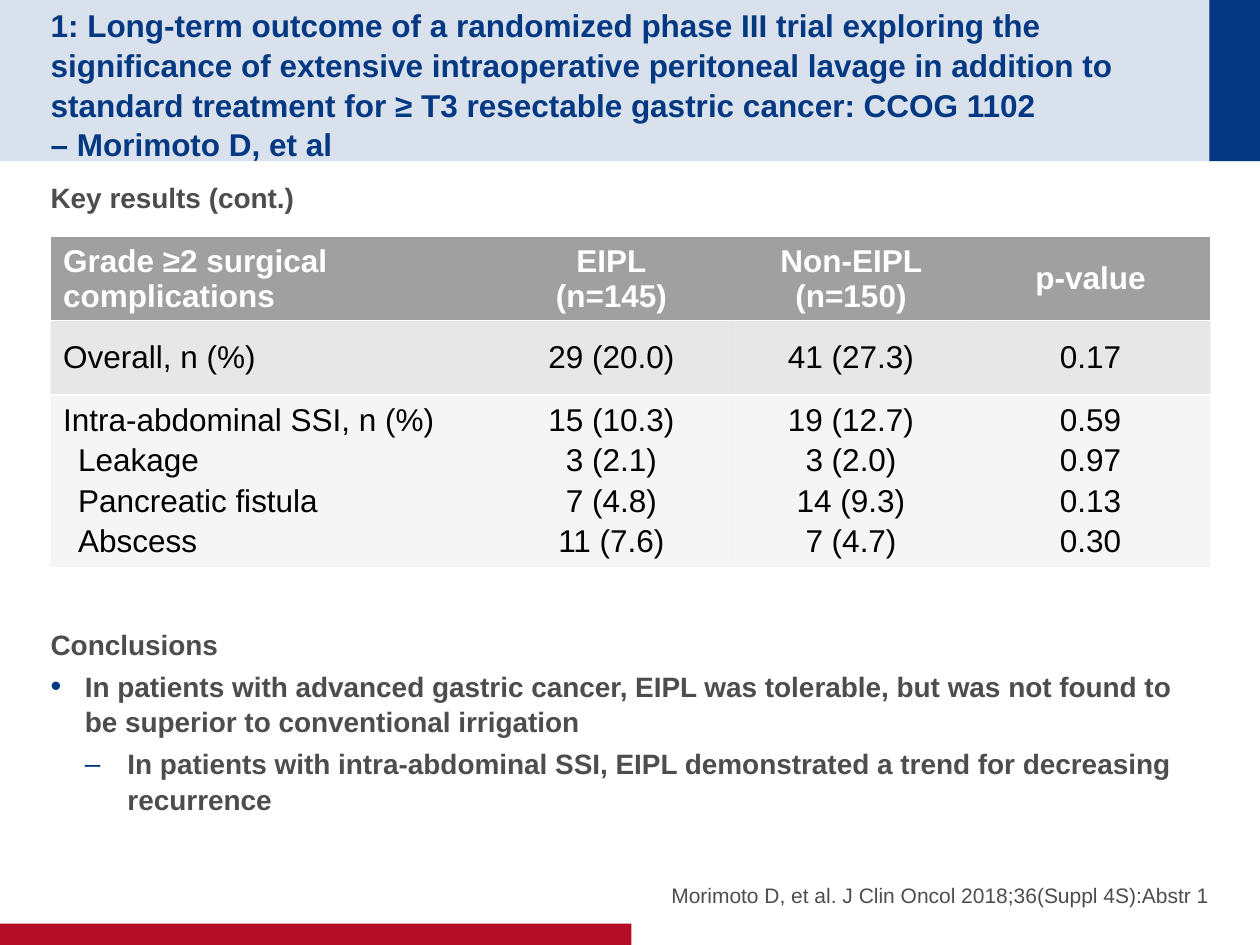
from lxml.etree import SubElement
from pptx import Presentation
from pptx.dml.color import RGBColor
from pptx.enum.shapes import MSO_SHAPE as Shape
from pptx.enum.text import MSO_ANCHOR as Anchor, MSO_AUTO_SIZE as AutoSize, PP_ALIGN as Align
from pptx.oxml.ns import qn
from pptx.util import Cm, Pt

COLORS = {"navy": "043882", "red": "B60D27", "text": "4D4D4D",
          "grey": "A0A0A0", "white": "FFFFFF", "black": "000000"}
PLAIN_TABLE = "{2D5ABB26-0587-4C30-8999-92F81FD0307C}"

TITLE = ("1: Long-term outcome of a randomized phase III trial exploring the significance of "
         "extensive intraoperative peritoneal lavage in addition to standard treatment for "
         "≥ T3 resectable gastric cancer: CCOG 1102 \v– Morimoto D, et al")
CITATION = "Morimoto D, et al. J Clin Oncol 2018;36(Suppl 4S):Abstr 1"
# Text, bullet, left indent (cm), hanging indent (cm), space before (pt)
BODY = [
    ("Key results (cont.)", None, 0, 0, 0),
    ("Conclusions", None, 0, 0, 231),
    ("In patients with advanced gastric cancer, EIPL was tolerable, but was not found to be "
     "superior to conventional irrigation", "•", 0.69, 0.69, 0),
    ("In patients with intra-abdominal SSI, EIPL demonstrated a trend for decreasing recurrence",
     "–", 1.55, 0.86, 0),
]
# Each cell is a list of paragraphs
ROWS = [
    [["Grade ≥2 surgical complications"], ["EIPL\v(n=145)"], ["Non-EIPL (n=150)"], ["p-value"]],
    [["Overall, n (%)"], ["29 (20.0)"], ["41 (27.3)"], ["0.17"]],
    [["Intra-abdominal SSI, n (%)", "Leakage", "Pancreatic fistula", "Abscess"],
     ["15 (10.3)", "3 (2.1)", "7 (4.8)", "11 (7.6)"],
     ["19 (12.7)", "3 (2.0)", "14 (9.3)", "7 (4.7)"],
     ["0.59", "0.97", "0.13", "0.30"]],
]
ROW_HEIGHTS = [1.68, 1.5, 3.48]
ROW_OPACITY = [100, 25, 10]
COLUMN_WIDTHS = [8.89, 4.83, 4.83, 4.83]


def set_values(target, **values):
    for name, value in values.items():
        setattr(target, name, value)


def place(shape, left, top, width, height):
    set_values(shape, left=Cm(left), top=Cm(top), width=Cm(width), height=Cm(height))


def paint(fill, holder, color, opacity=100):
    fill.solid()
    fill.fore_color.rgb = RGBColor.from_string(COLORS[color])
    if opacity < 100:
        SubElement(holder.find(".//" + qn("a:srgbClr")), qn("a:alpha"), val=str(opacity * 1000))


def write(para, text, size, color, bold=False, **layout):
    para.text = text
    set_values(para.font, name="Arial", size=Pt(size), bold=bold)
    para.font.color.rgb = RGBColor.from_string(COLORS[color])
    set_values(para, **layout)


def set_bullet(para, mark, left, hanging):
    props = para._p.get_or_add_pPr()
    props.set("marL", str(Cm(left)))
    props.set("indent", str(-Cm(hanging)))
    if mark is None:
        SubElement(props, qn("a:buNone"))
        return
    SubElement(SubElement(props, qn("a:buClr")), qn("a:srgbClr"), val=COLORS["navy"])
    if mark == "•":
        SubElement(props, qn("a:buSzPct"), val="110000")
    SubElement(props, qn("a:buFont"), typeface="Arial")
    SubElement(props, qn("a:buChar"), char=mark)


def set_frame(frame, anchor, top=0, bottom=0):
    set_values(frame, word_wrap=True, auto_size=AutoSize.NONE, vertical_anchor=anchor,
               margin_left=0, margin_right=0, margin_top=Cm(top), margin_bottom=Cm(bottom))


def add_bar(page, box, color, opacity=100):
    bar = page.shapes.add_shape(Shape.RECTANGLE, *map(Cm, box))
    bar.shadow.inherit = False
    bar.line.fill.background()
    paint(bar.fill, bar._element.spPr, color, opacity)
    # Bars lie behind the placeholders
    page.shapes._spTree.insert(2, bar._element)


def build_header(page, left, top, width, height):
    accent = 1.02
    add_bar(page, (left + width - accent, top, accent, height), "navy")
    add_bar(page, (left, top, width, height), "navy", 15)
    title = page.shapes.title
    place(title, left + 1.02, top + 0.51, 22.89, height - 1.02)
    set_frame(title.text_frame, Anchor.MIDDLE, top=0.13)
    write(title.text_frame.paragraphs[0], TITLE, 18, "navy", True,
          alignment=Align.LEFT, line_spacing=1.05, space_before=Pt(0))


def build_body(body, *box):
    place(body, *box)
    frame = body.text_frame
    set_frame(frame, Anchor.TOP, 0.13, 0.13)
    for number, (text, mark, left, hanging, before) in enumerate(BODY):
        para = frame.add_paragraph() if number else frame.paragraphs[0]
        write(para, text, 16, "text", True, level=int(mark == "–"), alignment=Align.LEFT,
              line_spacing=1.05, space_before=Pt(before), space_after=Pt(4))
        set_bullet(para, mark, left, hanging)


def add_row_line(cell):
    line = SubElement(cell._tc.tcPr, qn("a:lnB"), w=str(Pt(1)))
    SubElement(SubElement(line, qn("a:solidFill")), qn("a:srgbClr"), val=COLORS["white"])
    cell._tc.tcPr.insert(0, line)


def build_table(page, left, top):
    table = page.shapes.add_table(
        len(ROWS), len(COLUMN_WIDTHS), Cm(left), Cm(top),
        Cm(sum(COLUMN_WIDTHS)), Cm(sum(ROW_HEIGHTS))).table
    table.horz_banding = False
    table._tbl.tblPr.find(qn("a:tableStyleId")).text = PLAIN_TABLE
    for column, width in zip(table.columns, COLUMN_WIDTHS):
        column.width = Cm(width)
    for r, texts in enumerate(ROWS):
        table.rows[r].height = Cm(ROW_HEIGHTS[r])
        for c, lines in enumerate(texts):
            cell = table.cell(r, c)
            cell.vertical_anchor = Anchor.MIDDLE
            paint(cell.fill, cell._tc.tcPr, "grey", ROW_OPACITY[r])
            add_row_line(cell)
            for n, text in enumerate(lines):
                para = cell.text_frame.add_paragraph() if n else cell.text_frame.paragraphs[0]
                write(para, text, 18, "black" if r else "white", r == 0,
                      alignment=Align.CENTER if c else Align.LEFT,
                      space_before=Pt(3 if n else 0))
                if n and c == 0:
                    para._p.get_or_add_pPr().set("marL", str(Cm(0.3)))


def build_citation(citation, *box):
    place(citation, *box)
    set_frame(citation.text_frame, Anchor.BOTTOM)
    para = citation.text_frame.paragraphs[0]
    write(para, CITATION, 12, "text", alignment=Align.RIGHT,
          space_before=Pt(0), space_after=Pt(4))
    set_bullet(para, None, 0, 0)


def main():
    deck = Presentation()
    set_values(deck, slide_width=Cm(25.4), slide_height=Cm(19.05))
    # The two-content layout holds the body and the citation
    page = deck.slides.add_slide(deck.slide_layouts[3])
    build_header(page, 0, 0, 25.4, 3.25)
    build_body(page.placeholders[1], 1.02, 3.48, 23.37, 13.18)
    build_citation(page.placeholders[2], 12.9, 16.94, 11.48, 1.35)
    build_table(page, 1.02, 4.78)
    add_bar(page, (0, 18.62, 12.73, 0.43), "red")
    deck.save("out.pptx")


if __name__ == "__main__":
    main()
